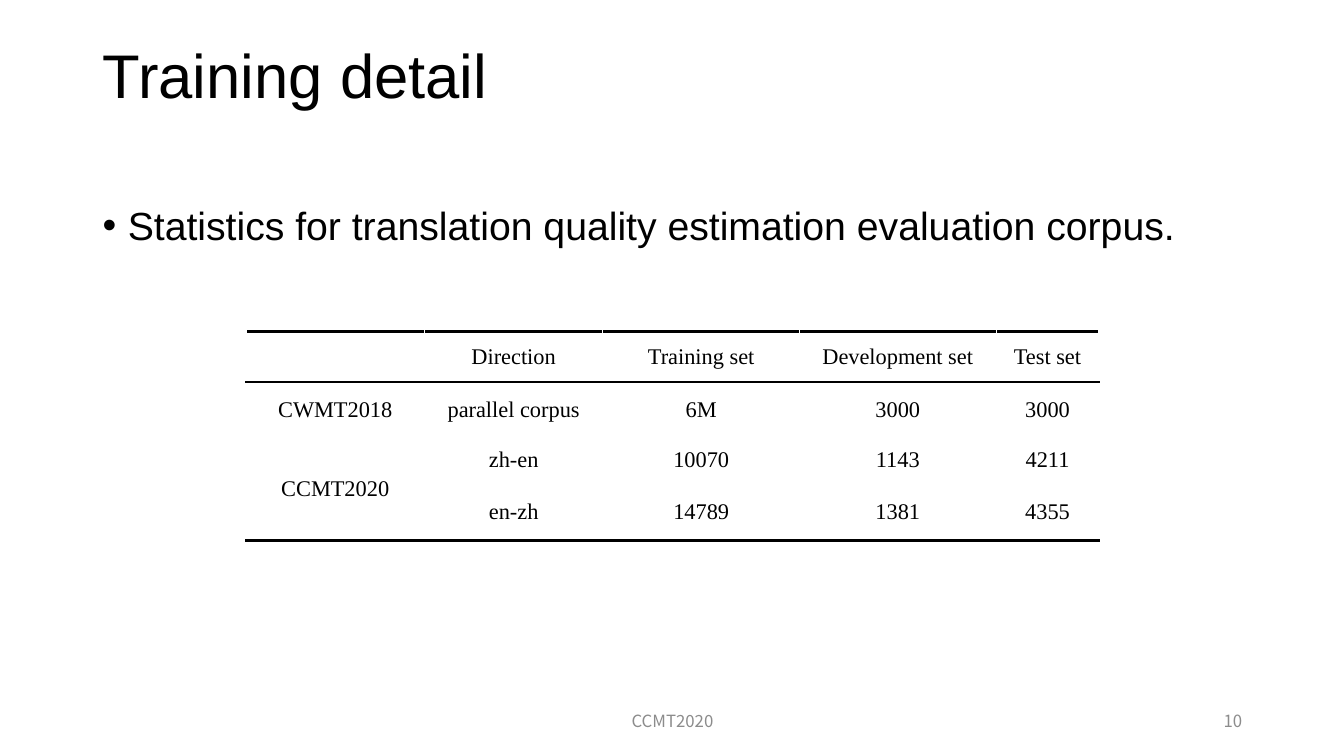
"""Build the training detail slide with its corpus statistics table."""
from lxml import etree
from pptx import Presentation
from pptx.dml.color import RGBColor
from pptx.enum.text import MSO_ANCHOR, PP_ALIGN
from pptx.oxml.ns import qn
from pptx.util import Inches, Pt

BLACK = RGBColor(0x00, 0x00, 0x00)
WHITE = RGBColor(0xFF, 0xFF, 0xFF)
GRAY = RGBColor(0x8C, 0x8C, 0x8C)
LEFT, CENTER, RIGHT = PP_ALIGN.LEFT, PP_ALIGN.CENTER, PP_ALIGN.RIGHT
TOP, MIDDLE = MSO_ANCHOR.TOP, MSO_ANCHOR.MIDDLE

COLUMN_WIDTHS = [1.77, 1.77, 1.95, 1.95, 1.02]
ROW_HEIGHTS = [0.5, 0.54, 0.45, 0.58]
CORPUS_ROWS = [
    ["", "Direction", "Training set", "Development set", "Test set"],
    ["CWMT2018", "parallel corpus", "6M", "3000", "3000"],
    ["CCMT2020", "zh-en", "10070", "1143", "4211"],
    ["", "en-zh", "14789", "1381", "4355"],
]
THICK, THIN, HIDDEN = (BLACK, 2.25), (BLACK, 1), (WHITE, 1)
ROW_RULES = [THICK, THIN, HIDDEN, HIDDEN, THICK]


class SlideBuilder:
    heading_font = "Arial"
    table_font = "Times New Roman"
    footer_font = "Noto Sans CJK SC"

    def __init__(self, slide):
        self.slide = slide

    def add_run(self, paragraph, text, font_name, size, color):
        run = paragraph.add_run()
        run.text = text
        run.font.name = font_name
        run.font.size = Pt(size)
        run.font.color.rgb = color

    def add_text(self, box, text, font_name, size, color, align=LEFT, anchor=TOP):
        shape = self.slide.shapes.add_textbox(*map(Inches, box))
        frame = shape.text_frame
        frame.word_wrap = True
        frame.vertical_anchor = anchor
        paragraph = frame.paragraphs[0]
        paragraph.alignment = align
        self.add_run(paragraph, text, font_name, size, color)
        return paragraph

    def add_heading(self, box, text, size):
        paragraph = self.add_text(box, text, self.heading_font, size, BLACK)
        paragraph.line_spacing = 0.9
        return paragraph

    def add_bullet(self, box, text, size):
        properties = self.add_heading(box, text, size)._p.get_or_add_pPr()
        properties.set("marL", str(Inches(0.25)))
        properties.set("indent", str(-Inches(0.25)))
        etree.SubElement(properties, qn("a:buFont"), typeface="Arial")
        etree.SubElement(properties, qn("a:buChar"), char="•")

    def add_footer(self, box, text, align):
        self.add_text(box, text, self.footer_font, 12, GRAY, align, MIDDLE)

    def style_cell(self, cell, rule_above, rule_below):
        properties = cell._tc.get_or_add_tcPr()
        sides = {"L": HIDDEN, "R": HIDDEN, "T": rule_above, "B": rule_below}
        for side, (color, width) in sides.items():
            line = etree.SubElement(properties, qn(f"a:ln{side}"), w=str(Pt(width)))
            fill = etree.SubElement(line, qn("a:solidFill"))
            etree.SubElement(fill, qn("a:srgbClr"), val=str(color))
        cell.fill.background()
        cell.vertical_anchor = MIDDLE
        cell.margin_left = cell.margin_top = cell.margin_right = Inches(0.01)
        cell.margin_bottom = 0

    def add_table(self, left, top, rows, widths, heights):
        frame = self.slide.shapes.add_table(
            len(rows), len(widths), Inches(left), Inches(top),
            Inches(sum(widths)), Inches(sum(heights)))
        table = frame.table
        table.first_row = False
        table.horz_banding = False
        for column, width in zip(table.columns, widths):
            column.width = Inches(width)
        for row, height in zip(table.rows, heights):
            row.height = Inches(height)
        for row_index, texts in enumerate(rows):
            for column_index, text in enumerate(texts):
                cell = table.cell(row_index, column_index)
                self.style_cell(cell, ROW_RULES[row_index], ROW_RULES[row_index + 1])
                if text:
                    paragraph = cell.text_frame.paragraphs[0]
                    paragraph.alignment = CENTER
                    self.add_run(paragraph, text, self.table_font, 16, BLACK)
        return table


def main():
    presentation = Presentation()
    presentation.slide_width = Inches(13.33)
    presentation.slide_height = Inches(7.5)
    builder = SlideBuilder(presentation.slides.add_slide(presentation.slide_layouts[6]))

    builder.add_heading((0.92, 0.4, 7.55, 0.96), "Training detail", 44)
    builder.add_bullet(
        (0.92, 2, 11.5, 4.76),
        "Statistics for translation quality estimation evaluation corpus.", 28)

    table = builder.add_table(2.44, 3.29, CORPUS_ROWS, COLUMN_WIDTHS, ROW_HEIGHTS)
    merged_corpus = table.cell(2, 0)
    merged_corpus.merge(table.cell(3, 0))
    bottom_line = merged_corpus._tc.tcPr.find(qn("a:lnB"))
    bottom_line.set("w", str(Pt(2.25)))
    bottom_line.find(".//" + qn("a:srgbClr")).set("val", str(BLACK))

    builder.add_footer((9.42, 6.95, 3, 0.4), "10", RIGHT)
    builder.add_footer((4.42, 6.95, 4.5, 0.4), "CCMT2020", CENTER)
    presentation.save("out.pptx")


if __name__ == "__main__":
    main()
